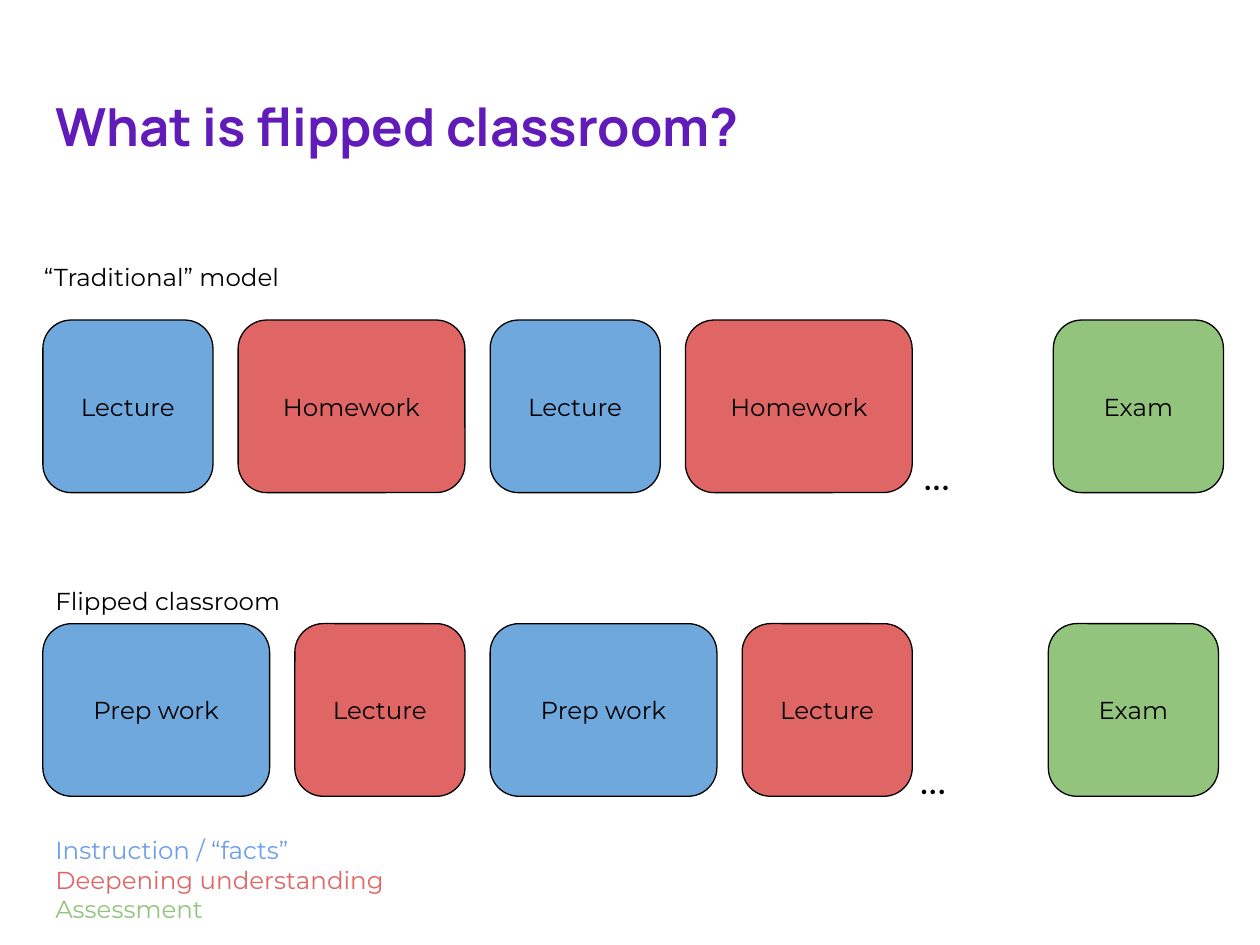
import pptx
import pptx.util
import pptx.dml.color
import pptx.enum.shapes
import pptx.enum.text
from dataclasses import dataclass

Inches, Pt = pptx.util.Inches, pptx.util.Pt
Kind = pptx.enum.shapes.MSO_SHAPE
Align, Anchor = pptx.enum.text.PP_ALIGN, pptx.enum.text.MSO_ANCHOR


@dataclass
class Theme:
    head: str = "Manrope"
    body: str = "Montserrat"
    big: int = 30
    dots: int = 24
    text: int = 14
    title: str = "611BB8"
    ink: str = "000000"
    fact: str = "6FA8DC"
    deep: str = "E06666"
    test: str = "93C47D"
    key: str = "6D9EEB"


theme = Theme()
rgb = pptx.dml.color.RGBColor.from_string


def write(shape, lines, size=theme.text, font=theme.body, anchor=Anchor.TOP,
          align=Align.LEFT, bold=False):
    """Fill a shape with (text, colour) lines."""
    frame = shape.text_frame
    frame.word_wrap = True
    frame.auto_size = pptx.enum.text.MSO_AUTO_SIZE.NONE
    frame.vertical_anchor = anchor
    frame.margin_left = frame.margin_right = Inches(0.1)
    frame.margin_top = frame.margin_bottom = Inches(0.1)
    frame.text = "\n".join(text for text, _ in lines)
    for para, (_, color) in zip(frame.paragraphs, lines):
        para.alignment = align
        para.font.name = font
        para.font.size = Pt(size)
        para.font.bold = bold
        para.font.color.rgb = rgb(color)


def place(x, y, w, h):
    return Inches(x), Inches(y), Inches(w), Inches(h)


deck = pptx.Presentation()
deck.slide_width, deck.slide_height = Inches(10), Inches(7.5)
slide = deck.slides.add_slide(deck.slide_layouts[5])
shapes = slide.shapes

# Title
title = shapes.title
title.left, title.top, title.width, title.height = place(0.34, 0.65, 9.32, 0.91)
write(title, [("What is flipped classroom?", theme.title)], theme.big,
      theme.head, bold=True)

# Both models: label, repeated pair of steps, dots, exam
left, gap, high = 0.34, 0.2, 1.37
slim, wide = 1.35, 1.8
soft, round_box = Kind.FLOWCHART_ALTERNATE_PROCESS, Kind.ROUNDED_RECTANGLE
rows = [
    ("“Traditional” model", 0.25, 1.98, 2.54, 7.23, 8.36,
     [("Lecture", slim, theme.fact, soft),
      ("Homework", wide, theme.deep, round_box)]),
    ("Flipped classroom", 0.34, 4.55, 4.95, 7.2, 8.32,
     [("Prep work", wide, theme.fact, soft),
      ("Lecture", slim, theme.deep, soft)]),
]
for label, label_x, label_y, top, dots_x, exam_x, pair in rows:
    steps, x = [], left
    for step in pair * 2:
        steps.append((x, *step))
        x += step[1] + gap
    steps.append((exam_x, "Exam", slim, theme.test, soft))

    for x, name, width, color, kind in steps:
        box = shapes.add_shape(kind, *place(round(x, 2), top, width, high))
        box.shadow.inherit = False
        box.fill.solid()
        box.fill.fore_color.rgb = rgb(color)
        box.line.color.rgb = rgb(theme.ink)
        box.line.width = Pt(0.75)
        write(box, [(name, theme.ink)], anchor=Anchor.MIDDLE,
              align=Align.CENTER)

    dots = shapes.add_textbox(*place(dots_x, top + 0.92, 0.61, 0.34))
    write(dots, [("...", theme.ink)], theme.dots)
    note = shapes.add_textbox(*place(label_x, label_y, 2.31, 0.3))
    write(note, [(label, theme.ink)])

# Colour key
legend = shapes.add_textbox(*place(left, 6.53, 3.12, 0.91))
write(legend, [("Instruction / “facts”", theme.key),
               ("Deepening understanding", theme.deep),
               ("Assessment", theme.test)])

deck.save("out.pptx")
